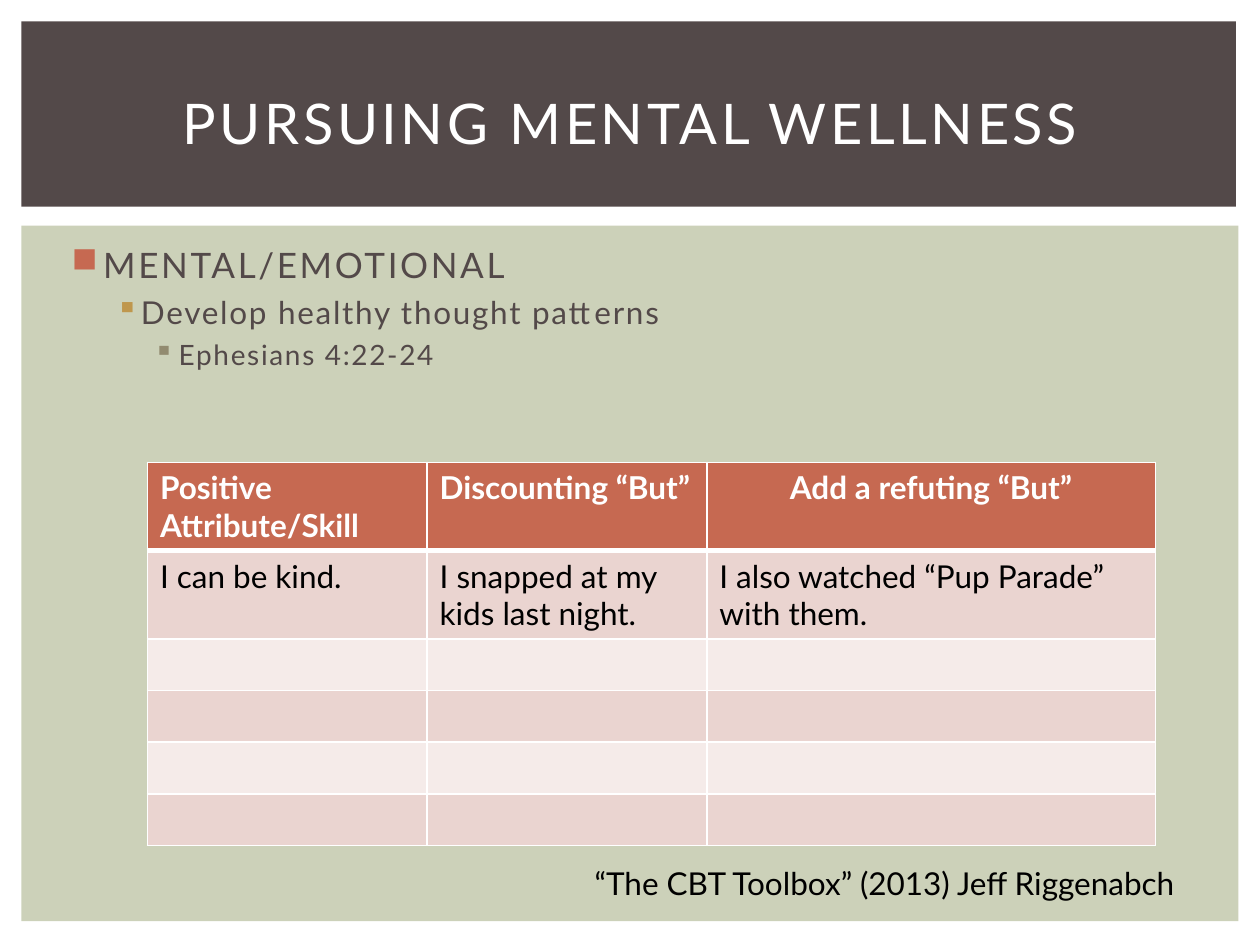
from dataclasses import dataclass

from lxml.etree import SubElement
from pptx import Presentation
from pptx.dml.color import RGBColor
from pptx.enum.shapes import MSO_SHAPE
from pptx.enum.text import MSO_ANCHOR, PP_ALIGN
from pptx.oxml.ns import qn
from pptx.util import Inches, Pt


@dataclass(frozen=True)
class Theme:
    font: str = "Lato"
    dark: str = "534949"
    sage: str = "CCD1B9"
    rust: str = "C66951"
    gold: str = "BF974D"
    olive: str = "928B70"
    white: str = "FFFFFF"
    black: str = "000000"
    row_bands: tuple[str, str] = ("EAD4D0", "F5EBE9")
    title_size: int = 32
    text_size: int = 18


@dataclass(frozen=True)
class Box:
    left: float
    top: float
    width: float
    height: float

    def emu(self) -> tuple:
        return tuple(map(Inches, (self.left, self.top, self.width, self.height)))


@dataclass(frozen=True)
class OutlineItem:
    text: str
    size: int
    spacing: float
    indent: float
    hanging: float
    bullet: str
    bullet_color: str


THEME = Theme()
CONTENT_BAND = Box(0.17, 1.79, 9.66, 5.52)
TITLE_BAND = Box(0.17, 0.17, 9.64, 1.47)
OUTLINE = [
    OutlineItem("MENTAL/EMOTIONAL", 20, 1.5, 0.3, 0.25, "■", THEME.rust),
    OutlineItem("Develop healthy thought patterns", 18, 1, 0.6, 0.2, "▪", THEME.gold),
    OutlineItem("Ephesians 4:22-24", 16, 1, 0.9, 0.2, "▪", THEME.olive),
]
HEADINGS = ["Positive Attribute/Skill", "Discounting “But”", "Add a refuting “But”"]
EXAMPLE = ["I can be kind.", "I snapped at my kids last night.",
           "I also watched “Pup Parade” with them."]
COLUMN_WIDTHS = [2.22, 2.22, 3.56]
ROW_HEIGHTS = [0.7, 0.7] + [0.41] * 4


def write(paragraph, text: str, *, color: str = THEME.black, size: float = THEME.text_size,
          bold: bool = False, spacing: float = 0, align=PP_ALIGN.LEFT) -> None:
    """Add a formatted run; spacing is the letter spacing in points."""
    paragraph.alignment = align
    run = paragraph.add_run()
    run.text = text
    run.font.name = THEME.font
    run.font.size = Pt(size)
    run.font.bold = bold
    run.font.color.rgb = RGBColor.from_string(color)
    if spacing:
        run.font._element.set("spc", str(int(spacing * 100)))


def add_band(slide, box: Box, color: str) -> None:
    band = slide.shapes.add_shape(MSO_SHAPE.RECTANGLE, *box.emu())
    band.shadow.inherit = False
    band.fill.solid()
    band.fill.fore_color.rgb = RGBColor.from_string(color)
    band.line.fill.background()


def add_text_frame(slide, box: Box):
    frame = slide.shapes.add_textbox(*box.emu()).text_frame
    frame.word_wrap = True
    return frame


def place_title(slide, text: str) -> None:
    title = slide.shapes.title
    title.left, title.top, title.width, title.height = Box(0.42, 0.39, 9.17, 1.15).emu()
    title.text_frame.vertical_anchor = MSO_ANCHOR.MIDDLE
    write(title.text_frame.paragraphs[0], text, color=THEME.white,
          size=THEME.title_size, spacing=2, align=PP_ALIGN.CENTER)
    # The bands were added later, so the title goes back on top of them.
    slide.shapes._spTree.append(title._element)


def set_bullet(paragraph, item: OutlineItem) -> None:
    properties = paragraph._p.get_or_add_pPr()
    properties.set("marL", str(Inches(item.indent)))
    properties.set("indent", str(-Inches(item.hanging)))
    color = SubElement(properties, qn("a:buClr"))
    SubElement(color, qn("a:srgbClr"), val=item.bullet_color)
    SubElement(properties, qn("a:buChar"), char=item.bullet)


def add_outline(slide, box: Box, items: list[OutlineItem]) -> None:
    frame = add_text_frame(slide, box)
    for level, item in enumerate(items):
        paragraph = frame.add_paragraph() if level else frame.paragraphs[0]
        paragraph.level = level
        paragraph.space_before = Pt(item.size * 0.24)
        write(paragraph, item.text, color=THEME.dark, size=item.size, spacing=item.spacing)
        set_bullet(paragraph, item)


def set_borders(cell, **widths: float) -> None:
    """Draw white cell borders, with widths in points by side tag."""
    properties = cell._tc.get_or_add_tcPr()
    for position, (side, width) in enumerate(widths.items()):
        line = properties.makeelement(qn(f"a:{side}"), {"w": str(Pt(width))})
        fill = SubElement(line, qn("a:solidFill"))
        SubElement(fill, qn("a:srgbClr"), val=THEME.white)
        properties.insert(position, line)


def add_thought_table(slide, box: Box) -> None:
    table = slide.shapes.add_table(len(ROW_HEIGHTS), len(COLUMN_WIDTHS), *box.emu()).table
    for column, width in zip(table.columns, COLUMN_WIDTHS):
        column.width = Inches(width)
    for row_index, (row, height) in enumerate(zip(table.rows, ROW_HEIGHTS)):
        row.height = Inches(height)
        fill = THEME.row_bands[(row_index - 1) % 2] if row_index else THEME.rust
        for cell in row.cells:
            cell.fill.solid()
            cell.fill.fore_color.rgb = RGBColor.from_string(fill)
            set_borders(cell, lnL=1, lnR=1, lnT=3 if row_index == 1 else 1,
                        lnB=1 if row_index else 3)
    for column_index, (heading, example) in enumerate(zip(HEADINGS, EXAMPLE)):
        is_last = column_index == len(HEADINGS) - 1
        write(table.cell(0, column_index).text_frame.paragraphs[0], heading,
              color=THEME.white, bold=True,
              align=PP_ALIGN.CENTER if is_last else PP_ALIGN.LEFT)
        write(table.cell(1, column_index).text_frame.paragraphs[0], example)


def main() -> None:
    presentation = Presentation()
    presentation.slide_width = Inches(10)
    presentation.slide_height = Inches(7.5)
    slide = presentation.slides.add_slide(presentation.slide_layouts[5])

    add_band(slide, CONTENT_BAND, THEME.sage)
    add_band(slide, TITLE_BAND, THEME.dark)
    add_outline(slide, Box(0.42, 1.88, 9.19, 4.82), OUTLINE)
    place_title(slide, "PURSUING MENTAL WELLNESS")
    citation = add_text_frame(slide, Box(3.75, 6.81, 5.67, 0.4))
    write(citation.paragraphs[0], "“The CBT Toolbox” (2013) Jeff Riggenabch",
          align=PP_ALIGN.RIGHT)
    add_thought_table(slide, Box(1.17, 3.67, sum(COLUMN_WIDTHS), sum(ROW_HEIGHTS)))

    presentation.save("out.pptx")


if __name__ == "__main__":
    main()
